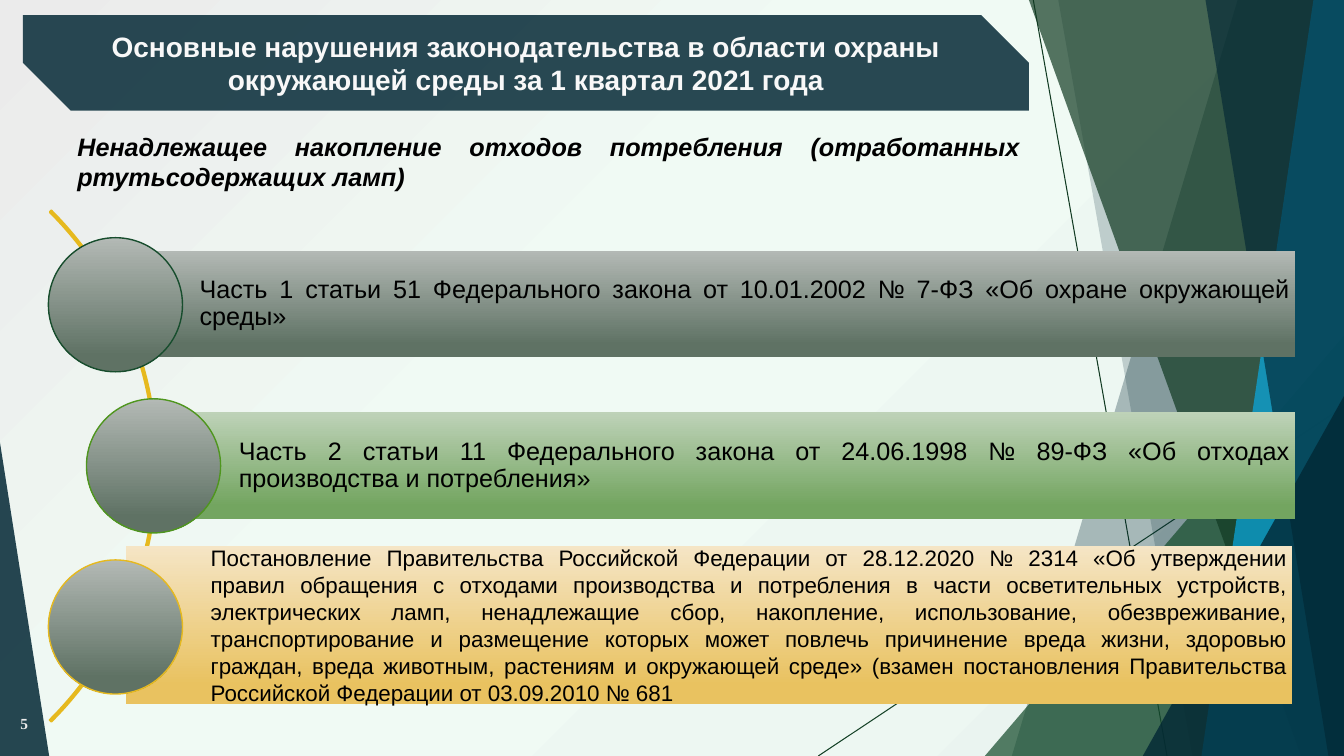
from pptx import Presentation
from pptx.dml.color import RGBColor as RGB
from pptx.enum.shapes import MSO_SHAPE as Kind
from pptx.enum.text import MSO_ANCHOR as Anchor, PP_ALIGN as Align
from pptx.oxml import parse_xml
from pptx.oxml.ns import nsdecls
from pptx.util import Cm, Pt
from lxml.etree import SubElement

WIDE, HIGH = 33.87, 19.05
NAVY = RGB(0x02, 0x27, 0x34)
PINE = RGB(0x11, 0x3A, 0x22)
MOSS = RGB(0x14, 0x41, 0x26)
GREEN = RGB(0x17, 0x4D, 0x2D)
LEAF = RGB(0x4F, 0x96, 0x1E)
CYAN = RGB(0x09, 0xAB, 0xE4)
GOLD = RGB(0xE6, 0xB9, 0x1E)
BLACK = RGB(0, 0, 0)
WHITE = RGB(0xF8, 0xF8, 0xF8)
PALE = RGB(0xEB, 0xEB, 0xEB)
MINT = RGB(0xF0, 0xFA, 0xF4)
MIST = RGB(0xEA, 0xF4, 0xF0)
GREY = RGB(0xB3, 0xB9, 0xB5), RGB(0x5F, 0x72, 0x64)
SAGE = RGB(0xBE, 0xD2, 0xB8), RGB(0x73, 0xA5, 0x60)
SAND = RGB(0xF5, 0xE5, 0xC5), RGB(0xE9, 0xC2, 0x60)

# Facets: top left x, bottom left x, colour, opacity in percent
FACETS = [
    (31.19, 25.5, NAVY, 30),
    (26.67, 30.05, NAVY, 20),
    (25.93, 32.79, PINE, 70),
    (33.1, 30.28, CYAN, 70),
    (30.38, 33.48, NAVY, 65),
]

# Laws: band box, band colours, circle left, circle outline, size, spacing, text
LAWS = [
    ((2.9, 6.32, 29.74, 2.69), GREY, 1.22, GREEN, 18, 0.9,
     "Часть 1 статьи 51 Федерального закона от 10.01.2002 № 7-ФЗ "
     "«Об охране окружающей среды»"),
    ((3.89, 10.39, 28.75, 2.69), SAGE, 2.18, LEAF, 18, 0.9,
     "Часть 2 статьи 11 Федерального закона от 24.06.1998 № 89-ФЗ "
     "«Об отходах производства и потребления»"),
    ((3.18, 13.77, 29.39, 3.96), SAND, 1.22, GOLD, 16, 1.0,
     "Постановление Правительства Российской Федерации от 28.12.2020 № 2314 "
     "«Об утверждении правил обращения с отходами производства и потребления "
     "в части осветительных устройств, электрических ламп, ненадлежащие сбор, "
     "накопление, использование, обезвреживание, транспортирование и "
     "размещение которых может повлечь причинение вреда жизни, здоровью "
     "граждан, вреда животным, растениям и окружающей среде» (взамен "
     "постановления Правительства Российской Федерации от 03.09.2010 № 681"),
]


def paint(shape, color, alpha):
    shape.shadow.inherit = False
    shape.line.fill.background()
    shape.fill.solid()
    shape.fill.fore_color.rgb = color
    tint = shape.fill._xPr.find(".//{*}srgbClr")
    SubElement(tint, tint.tag.replace("srgbClr", "alpha"), val=str(alpha * 1000))


def shade(shape, colors):
    shape.shadow.inherit = False
    shape.line.fill.background()
    shape.fill.gradient()
    shape.fill.gradient_angle = 270
    for stop, color, place in zip(shape.fill.gradient_stops, colors, (0, 0.88)):
        stop.color.rgb = color
        stop.position = place


def edge(shape, color, width):
    shape.line.color.rgb = color
    shape.line.width = Pt(width)


def put(slide, kind, box, *adjust):
    shape = slide.shapes.add_shape(kind, *map(Cm, box))
    for i, value in enumerate(adjust):
        shape.adjustments[i] = value
    return shape


def write(shape, text, size, color, align, pad=(0.25, 0.13, 0.25, 0.13),
          font="Arial", bold=False, slant=False, gap=1.0, anchor=Anchor.MIDDLE):
    frame = shape.text_frame
    frame.word_wrap = True
    frame.vertical_anchor = anchor
    (frame.margin_left, frame.margin_top,
     frame.margin_right, frame.margin_bottom) = map(Cm, pad)
    par = frame.paragraphs[0]
    par.text = text
    par.alignment = align
    par.line_spacing = gap
    par.font.name = font
    par.font.size = Pt(size)
    par.font.bold = bold
    par.font.italic = slant
    par.font.color.rgb = color


def label(slide, box, *args, **style):
    write(slide.shapes.add_textbox(*map(Cm, box)), *args, **style)


def ray(slide, ends, color):
    line = slide.shapes.add_connector(1, *map(Cm, ends))
    edge(line, color, 0.75)
    props = line._element.spPr
    SubElement(props, props[0].tag.replace("xfrm", "effectLst"))


def facet(slide, top, base, color, alpha):
    form = slide.shapes.build_freeform(Cm(top), 0)
    form.add_line_segments([(Cm(x), Cm(y)) for x, y in
                            ((WIDE, 0), (WIDE, HIGH), (base, HIGH))])
    paint(form.convert_to_shape(), color, alpha)


def wedge(slide, box, tip, color, alpha):
    paint(put(slide, Kind.ISOSCELES_TRIANGLE, box, tip), color, alpha)


def backdrop(slide):
    stops = "".join(
        f'<a:gs pos="{place * 1000}"><a:srgbClr val="{color}"/></a:gs>'
        for place, color in ((0, MIST), (58, MINT), (100, PALE)))
    slide._element.cSld.insert(0, parse_xml(
        f'<p:bg {nsdecls("p", "a")}><p:bgPr><a:gradFill rotWithShape="1">'
        f'<a:gsLst>{stops}</a:gsLst><a:path path="circle">'
        '<a:fillToRect l="100000" t="100000"/></a:path></a:gradFill>'
        '<a:effectLst/></p:bgPr></p:bg>'))


def law(slide, top, box, colors, left, rim, size, gap, text):
    band = put(slide, Kind.RECTANGLE, box)
    shade(band, colors)
    write(band, text, size, BLACK, Align.JUSTIFY,
          pad=(2.13, 0.13, 0.13, 0.13), gap=gap)
    disc = put(slide, Kind.OVAL, (left, top, 3.38, 3.38))
    shade(disc, GREY)
    edge(disc, rim, 1)


def main():
    deck = Presentation()
    deck.slide_width, deck.slide_height = Cm(WIDE), Cm(HIGH)
    slide = deck.slides.add_slide(deck.slide_layouts[6])

    # Backdrop with rays, facets and wedges
    backdrop(slide)
    ray(slide, (26.04, 0, 29.41, HIGH), PINE)
    ray(slide, (WIDE, 10.24, 20.62, HIGH), MOSS)
    for item in FACETS[:2]:
        facet(slide, *item)
    wedge(slide, (24.82, 8.46, 9.05, 10.59), 1, GREEN, 72)
    for item in FACETS[2:]:
        facet(slide, *item)
    wedge(slide, (28.8, 9.98, 5.07, 9.07), 1, NAVY, 80)
    wedge(slide, (0, 11.15, 1.24, 7.9), 0, NAVY, 85)

    # Title, page number and heading
    title = put(slide, Kind.SNIP_2_DIAG_RECTANGLE, (0.58, 0.38, 25.35, 2.41), 0, 0.5)
    paint(title, NAVY, 84)
    write(title, "Основные нарушения законодательства в области охраны "
          "окружающей среды за 1 квартал 2021 года",
          20, WHITE, Align.CENTER, bold=True)
    label(slide, (0, 17.73, 0.96, 1.02), "5", 11, PALE, Align.RIGHT,
          pad=(0, 0.13, 0.25, 0.13), font="Times New Roman", bold=True)
    label(slide, (1.7, 3.18, 24.26, 1.8),
          "Ненадлежащее накопление отходов потребления "
          "(отработанных ртутьсодержащих ламп)",
          18, BLACK, Align.JUSTIFY, bold=True, slant=True, anchor=Anchor.TOP)

    # Arc with the laws along it
    arc = put(slide, Kind.BLOCK_ARC, (-14.25, 2.64, 18.21, 18.21), 189, 27, 0.003)
    arc.shadow.inherit = False
    arc.fill.background()
    edge(arc, GOLD, 1.5)
    for i, item in enumerate(LAWS):
        law(slide, 5.99 + 4.06 * i, *item)

    deck.save("out.pptx")


if __name__ == "__main__":
    main()
